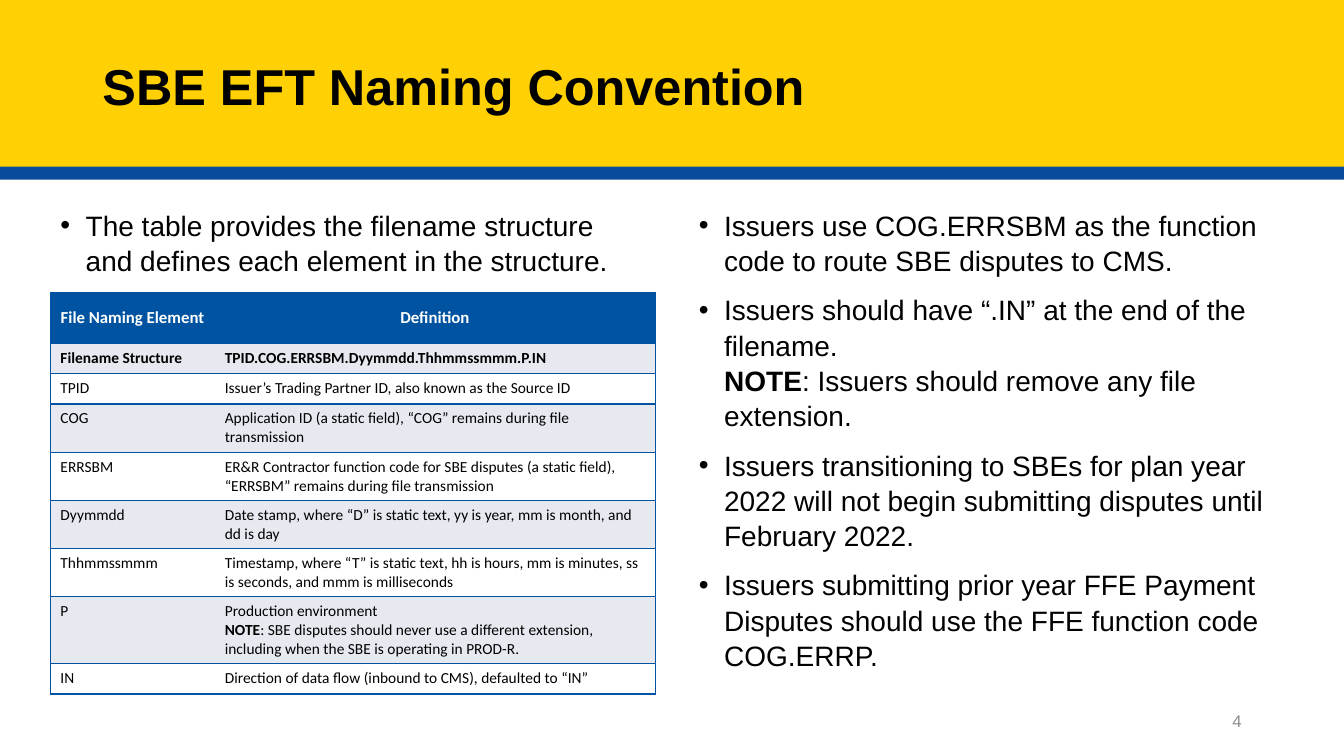
import pptx
import pptx.util
import pptx.dml.color
import pptx.enum.shapes
import pptx.enum.text
import pptx.oxml
import pptx.oxml.ns

Pt = pptx.util.Pt
ALIGN = pptx.enum.text.PP_ALIGN
ANCHOR = pptx.enum.text.MSO_ANCHOR
COLOURS = {
    "yellow": "FFD004", "stripe": "084A9C", "table blue": "0053A0",
    "shade": "E7E9F0", "white": "FFFFFF", "black": "000000", "grey": "8C8C8C",
}


def colour(name):
    return pptx.dml.color.RGBColor.from_string(COLOURS[name])


def write(paragraph, parts, face, size, shade):
    for words, bold in parts:
        if words == "\n":
            paragraph.add_line_break()
            continue
        run = paragraph.add_run()
        run.text = words
        run.font.name = face
        run.font.size = Pt(size)
        run.font.bold = bold
        run.font.color.rgb = colour(shade)


deck = pptx.Presentation()
deck.slide_width, deck.slide_height = Pt(960), Pt(540)
slide = deck.slides.add_slide(deck.slide_layouts[3])
title, structure_note, issuer_rules = slide.placeholders

for position, (top, height, shade) in enumerate([(114, 14.4, "stripe"), (0, 119, "yellow")]):
    band = slide.shapes.add_shape(
        pptx.enum.shapes.MSO_SHAPE.RECTANGLE, Pt(0), Pt(top), Pt(960), Pt(height))
    band.shadow.inherit = False
    band.fill.solid()
    band.fill.fore_color.rgb = colour(shade)
    band.line.fill.background()
    band.element.getparent().insert(2 + position, band.element)

title.left, title.top, title.width, title.height = Pt(66), Pt(14.4), Pt(828), Pt(98.6)
title.text_frame.vertical_anchor = ANCHOR.MIDDLE
heading = title.text_frame.paragraphs[0]
heading.alignment = ALIGN.LEFT
heading.line_spacing = 0.9
write(heading, [("SBE EFT Naming Convention", True)], "Arial", 36, "black")

structure_points = [
    [("The table provides the filename structure and defines each element in the structure.", False)],
]
issuer_points = [
    [("Issuers use COG.ERRSBM as the function code to route SBE disputes to CMS.", False)],
    [("Issuers should have “.IN” at the end of the filename.", False), ("\n", False),
     ("NOTE", True), (": Issuers should remove any file extension.", False)],
    [("Issuers transitioning to SBEs for plan year 2022 will not begin submitting disputes "
      "until February 2022.", False)],
    [("Issuers submitting prior year FFE Payment Disputes should use the FFE function code "
      "COG.ERRP.", False)],
]
for body, left, height, points in [
    (structure_note, 36, 65, structure_points),
    (issuer_rules, 492, 343, issuer_points),
]:
    body.left, body.top, body.width, body.height = Pt(left), Pt(144), Pt(432), Pt(height)
    frame = body.text_frame
    frame.auto_size = pptx.enum.text.MSO_AUTO_SIZE.NONE
    for number, point in enumerate(points):
        paragraph = frame.add_paragraph() if number else frame.paragraphs[0]
        properties = paragraph._p.get_or_add_pPr()
        properties.set("marL", str(Pt(18)))
        properties.set("indent", str(-Pt(18)))
        paragraph.space_before = Pt(10 if number else 0)
        paragraph.line_spacing = 1.05
        write(paragraph, point, "Arial", 20, "black")

naming_elements = [
    ("File Naming Element", [[("Definition", True)]]),
    ("Filename Structure", [[("TPID.COG.ERRSBM.Dyymmdd.Thhmmssmmm.P.IN", True)]]),
    ("TPID", [[("Issuer’s Trading Partner ID, also known as the Source ID", False)]]),
    ("COG", [[("Application ID (a static field), “COG” remains during file transmission", False)]]),
    ("ERRSBM", [[("ER&R Contractor function code for SBE disputes (a static field), "
                  "“ERRSBM” remains during file transmission", False)]]),
    ("Dyymmdd", [[("Date stamp, where “D” is static text, yy is year, mm is month, "
                   "and dd is day", False)]]),
    ("Thhmmssmmm", [[("Timestamp, where “T” is static text, hh is hours, mm is minutes, "
                      "ss is seconds, and mmm is milliseconds", False)]]),
    ("P", [[("Production environment", False)],
           [("NOTE", True), (": SBE disputes should never use a different "
                             "extension, including when the SBE is operating in PROD-R.", False)]]),
    ("IN", [[("Direction of data flow (inbound to CMS), defaulted to “IN”", False)]]),
]
row_heights = [36.4, 21.6, 21.6, 34.3, 34.3, 34.3, 34.3, 47.7, 21.6]
naming_table = slide.shapes.add_table(
    len(naming_elements), 2, Pt(36), Pt(209), Pt(432), Pt(sum(row_heights))).table
naming_table.first_row = False
naming_table.horz_banding = False
naming_table.columns[0].width = Pt(117.4)
naming_table.columns[1].width = Pt(314.6)

for row, (element, definition) in enumerate(naming_elements):
    naming_table.rows[row].height = Pt(row_heights[row])
    for column, content in enumerate([[[(element, row < 2)]], definition]):
        cell = naming_table.cell(row, column)
        inner_side = "R" if column == 0 else "L"
        for side in "LRTB":
            paint = "<a:noFill/>" if side == inner_side else (
                f'<a:solidFill><a:srgbClr val="{COLOURS["table blue"]}"/></a:solidFill>')
            cell._tc.get_or_add_tcPr().append(pptx.oxml.parse_xml(
                f'<a:ln{side} {pptx.oxml.ns.nsdecls("a")} w="{Pt(1)}">{paint}</a:ln{side}>'))
        cell.fill.solid()
        cell.fill.fore_color.rgb = colour(
            "table blue" if row == 0 else "shade" if row % 2 else "white")
        cell.vertical_anchor = ANCHOR.TOP if row else ANCHOR.MIDDLE
        for number, parts in enumerate(content):
            frame = cell.text_frame
            paragraph = frame.add_paragraph() if number else frame.paragraphs[0]
            paragraph.alignment = ALIGN.LEFT if row else ALIGN.CENTER
            write(paragraph, parts, "Calibri", 11 if row else 12, "black" if row else "white")

page_number = slide.shapes.add_textbox(Pt(678), Pt(500.4), Pt(216), Pt(28.8)).text_frame
page_number.word_wrap = True
page_number.vertical_anchor = ANCHOR.MIDDLE
page_number.paragraphs[0].alignment = ALIGN.RIGHT
write(page_number.paragraphs[0], [("4", False)], "Arial", 12, "grey")

deck.save("out.pptx")
